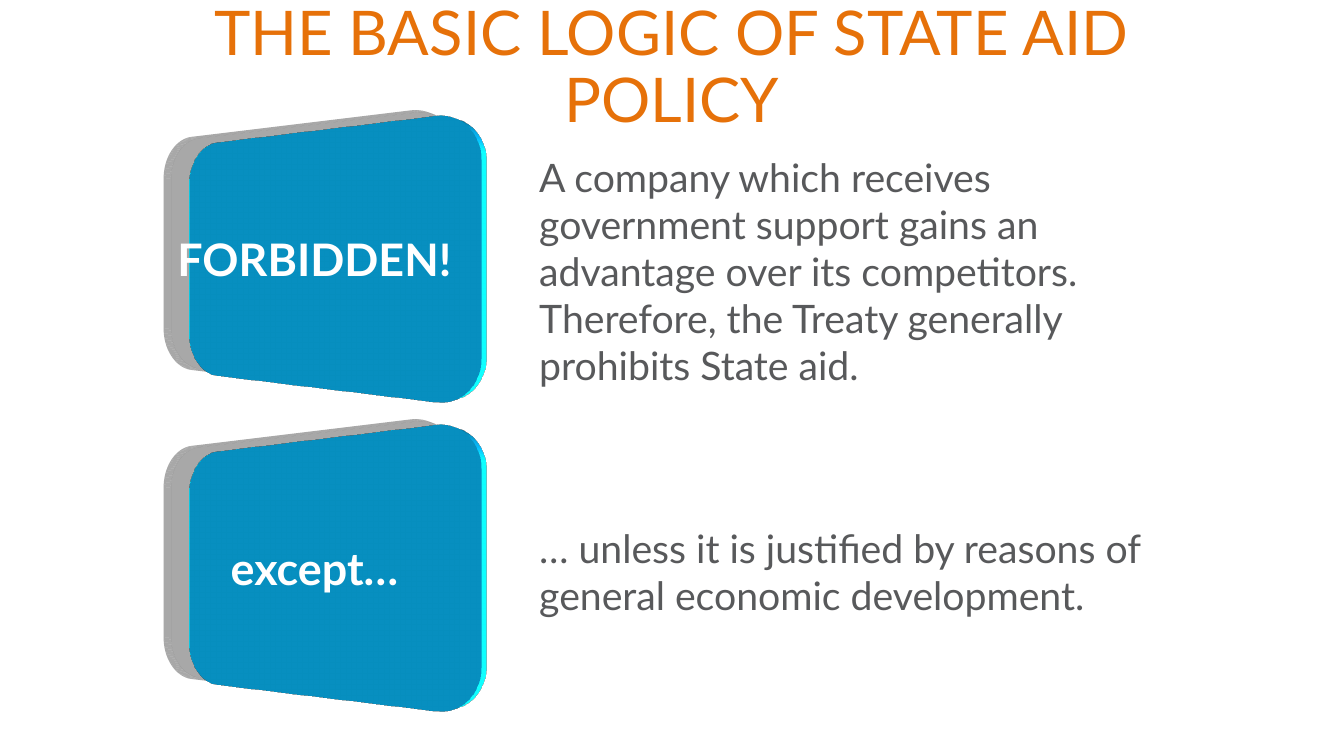
from lxml import etree
from pptx import Presentation
from pptx import util as u
from pptx.dml.color import RGBColor
from pptx.enum import shapes, text
from pptx.oxml.ns import qn

PX = 9071.43  # EMU in one px
FONT = "Lato"
ORANGE, GREY, WHITE, BLUE = "E67109", "58595B", "FFFFFF", "08A7E0"
TOP, PITCH = 132, 309


def px(n):
    return u.Emu(round(n * PX))


def rgb(code):
    return RGBColor.from_string(code)


def node(host, tag, **attrs):
    """Add a drawing element below host."""
    return etree.SubElement(host, qn("a:" + tag),
                            {k: str(v) for k, v in attrs.items()})


class Deck:
    def __init__(self):
        self.prs = Presentation()
        self.prs.slide_width = u.Inches(13.33)
        self.prs.slide_height = u.Inches(7.5)
        self.slide = self.prs.slides.add_slide(self.prs.slide_layouts[1])

    def place(self, holder, left, top, width, height):
        holder.left, holder.top = px(left), px(top)
        holder.width, holder.height = px(width), px(height)
        frame = holder.text_frame
        frame.word_wrap = True
        frame.auto_size = text.MSO_AUTO_SIZE.NONE
        return frame

    def style(self, para, size, color, bold=False):
        font = para.font
        font.name, font.size, font.bold = FONT, u.Pt(size), bold
        font.color.rgb = rgb(color)

    def title(self, words, *box):
        frame = self.place(self.slide.shapes.title, *box)
        frame.vertical_anchor = text.MSO_ANCHOR.MIDDLE
        para = frame.paragraphs[0]
        para.text = words
        para.alignment = text.PP_ALIGN.CENTER
        para.line_spacing = 0.9
        self.style(para, 44, ORANGE)

    def body(self, lines, gap, *box):
        frame = self.place(self.slide.placeholders[1], *box)
        frame.vertical_anchor = text.MSO_ANCHOR.TOP
        for i, line in enumerate(lines):
            para = frame.add_paragraph() if i else frame.paragraphs[0]
            para.text = line
            props = para._p.get_or_add_pPr()
            props.set("marL", "0")
            props.set("indent", "0")
            node(props, "buNone")
            para.space_before = u.Pt(gap if i else 0)
            self.style(para, 28, GREY)

    def tilt(self, shape):
        """Turn a shape in perspective, with depth and a soft shadow."""
        shape.shadow.inherit = False
        props = shape._element.spPr
        shadow = node(props.find(qn("a:effectLst")), "outerShdw",
                      blurRad=u.Pt(14.5), dist=u.Pt(19), dir=192 * 60000,
                      sx=110000, sy=110000, algn="ctr")
        node(node(shadow, "srgbClr", val="000000"), "alpha", val=18000)
        scene = node(props, "scene3d")
        camera = node(scene, "camera", prst="perspectiveFront", fov=5100000)
        node(camera, "rot", lat=0, lon=2100000, rev=0)
        light = node(scene, "lightRig", rig="flood", dir="t")
        node(light, "rot", lat=0, lon=0, rev=13800000)
        solid = node(props, "sp3d", extrusionH=u.Pt(8.5),
                     prstMaterial="plastic")
        node(solid, "bevelT", w=u.Pt(6.5), h=u.Pt(5), prst="divot")
        node(solid, "bevelB")

    def card(self, words, *box):
        shape = self.slide.shapes.add_shape(
            shapes.MSO_SHAPE.ROUNDED_RECTANGLE, *map(px, box))
        shape.fill.solid()
        shape.fill.fore_color.rgb = rgb(BLUE)
        shape.line.fill.background()
        self.tilt(shape)
        frame = shape.text_frame
        frame.word_wrap = True
        frame.vertical_anchor = text.MSO_ANCHOR.MIDDLE
        para = frame.paragraphs[0]
        para.text = words
        para.alignment = text.PP_ALIGN.CENTER
        self.style(para, 32, WHITE, True)


def main():
    deck = Deck()
    deck.title("THE BASIC LOGIC OF STATE AID POLICY", 92, 23, 1159, 92)
    deck.body([
        "A company which receives government support gains an advantage "
        "over its competitors. Therefore, the Treaty generally prohibits "
        "State aid.",
        "… unless it is justified by reasons of general economic "
        "development.",
    ], 97, 529, 148, 674, 559)
    for i, words in enumerate(["FORBIDDEN!", "except…"]):
        deck.card(words, 140, TOP + i * PITCH, 349, 254)
    deck.prs.save("out.pptx")


if __name__ == "__main__":
    main()
